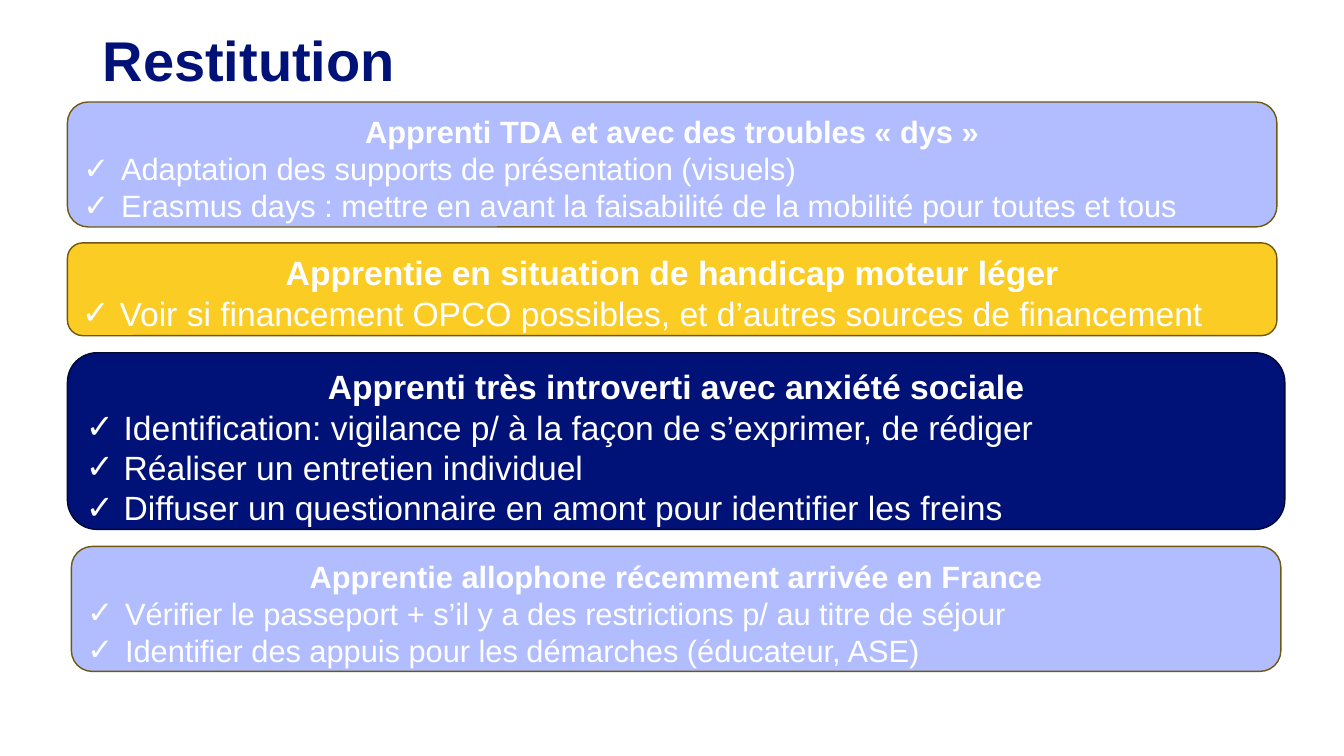
from lxml import etree
from pptx import Presentation
from pptx.dml.color import RGBColor
from pptx.enum import shapes, text
from pptx.oxml.ns import qn
from pptx.util import Cm, Pt

TITLE = "Restitution"
FONT = "Arial"
NAVY, LILAC, GOLD, WHITE = "001277", "B1BDFF", "FBCC23", "FFFFFF"
BROWN, DARK = "6E590F", "000834"

# left, top, width, height (cm); fill, line, text size, heading, points
CARDS = [
    ((1.7, 2.57, 30.48, 3.15), LILAC, BROWN, 22,
     "Apprenti TDA et avec des troubles « dys »",
     ["Adaptation des supports de présentation (visuels)",
      "Erasmus days : mettre en avant la faisabilité de la mobilité pour toutes et tous"]),
    ((1.7, 6.12, 30.48, 2.34), GOLD, BROWN, 24,
     "Apprentie en situation de handicap moteur léger",
     ["Voir si financement OPCO possibles, et d’autres sources de financement"]),
    ((1.7, 8.89, 30.68, 4.45), NAVY, DARK, 24,
     "Apprenti très introverti avec anxiété sociale",
     ["Identification: vigilance p/ à la façon de s’exprimer, de rédiger",
      "Réaliser un entretien individuel",
      "Diffuser un questionnaire en amont pour identifier les freins"]),
    ((1.8, 13.77, 30.48, 3.15), LILAC, BROWN, 22,
     "Apprentie allophone récemment arrivée en France",
     ["Vérifier le passeport + s’il y a des restrictions p/ au titre de séjour",
      "Identifier des appuis pour les démarches (éducateur, ASE)"]),
]


def color(code):
    return RGBColor.from_string(code)


def write(para, words, size, code, bold):
    run = para.add_run()
    run.text = words
    style = {"name": FONT, "size": Pt(size), "bold": bold}
    for key, value in style.items():
        setattr(run.font, key, value)
    run.font.color.rgb = color(code)


def tick(para):
    """Give the paragraph a hanging check mark."""
    props = para._p.get_or_add_pPr()
    props.set("marL", str(Cm(0.95)))
    props.set("indent", str(-Cm(0.95)))
    etree.SubElement(props, qn("a:buFont")).set("typeface", FONT)
    etree.SubElement(props, qn("a:buChar")).set("char", "✓")


def card(slide, place, fill, line, size, head, points):
    box = slide.shapes.add_shape(
        shapes.MSO_SHAPE.ROUNDED_RECTANGLE, *map(Cm, place))
    box.shadow.inherit = False
    box.fill.solid()
    box.fill.fore_color.rgb = color(fill)
    box.line.color.rgb = color(line)
    box.line.width = Pt(1)
    frame = box.text_frame
    frame.word_wrap = True
    frame.vertical_anchor = text.MSO_ANCHOR.TOP
    para = frame.paragraphs[0]
    para.alignment = text.PP_ALIGN.CENTER
    write(para, head, size, WHITE, True)
    for point in points:
        para = frame.add_paragraph()
        para.alignment = text.PP_ALIGN.LEFT
        tick(para)
        write(para, point, size, WHITE, False)


def main():
    deck = Presentation()
    deck.slide_width, deck.slide_height = Cm(33.87), Cm(19.05)
    slide = deck.slides.add_slide(deck.slide_layouts[6])
    frame = slide.shapes.add_textbox(
        Cm(2.34), Cm(-0.25), Cm(29.21), Cm(3.68)).text_frame
    frame.word_wrap = True
    frame.vertical_anchor = text.MSO_ANCHOR.MIDDLE
    frame.paragraphs[0].line_spacing = 0.9
    write(frame.paragraphs[0], TITLE, 40, NAVY, True)
    for item in CARDS:
        card(slide, *item)
    deck.save("out.pptx")


if __name__ == "__main__":
    main()
